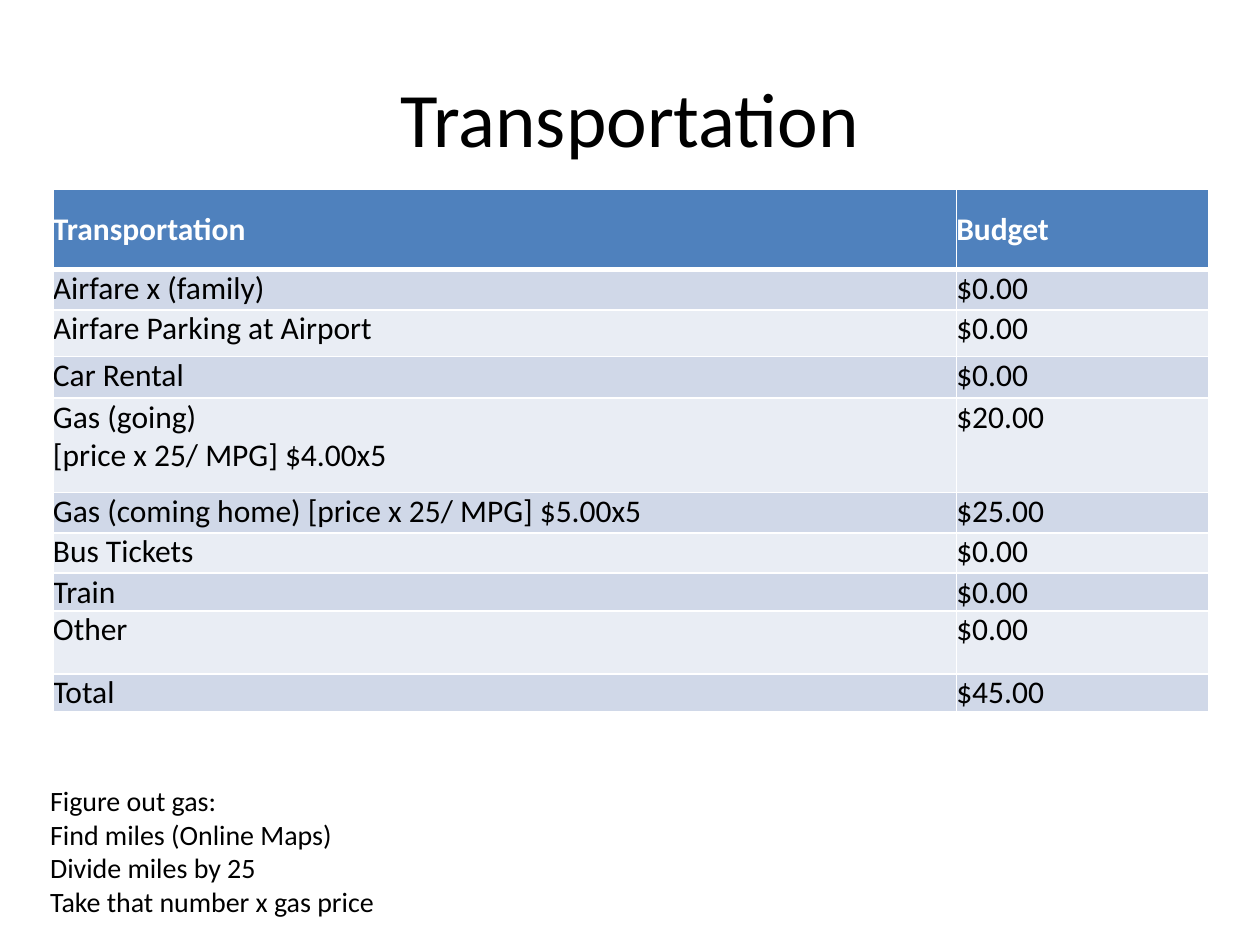
from dataclasses import dataclass

from lxml import etree
from pptx import Presentation
from pptx import util as u
from pptx.dml.color import RGBColor
from pptx.enum import text
from pptx.oxml import ns

Inches, Pt = u.Inches, u.Pt


@dataclass(frozen=True)
class Theme:
    font: str = "Calibri"
    ink: str = "000000"
    white: str = "FFFFFF"
    header: str = "4F81BD"
    bands: tuple = ("D0D8E8", "E9EDF4")
    title_size: int = 44
    table_size: int = 18
    note_size: int = 16


THEME = Theme()

COLUMN_WIDTHS = (7.17, 2)
BUDGET = [  # label, amount, row height in inches
    ("Transportation", "Budget", 0.64),
    ("Airfare x (family)", "$0.00", 0.32),
    ("Airfare Parking at Airport", "$0.00", 0.37),
    ("Car Rental", "$0.00", 0.33),
    ("Gas (going)\n[price x 25/ MPG] $4.00x5", "$20.00", 0.75),
    ("Gas (coming home) [price x 25/ MPG] $5.00x5", "$25.00", 0.32),
    ("Bus Tickets", "$0.00", 0.32),
    ("Train", "$0.00", 0.22),
    ("Other", "$0.00", 0.5),
    ("Total", "$45.00", 0.22),
]
GAS_STEPS = """Figure out gas:
Find miles (Online Maps)
Divide miles by 25
Take that number x gas price"""


def write(frame, words, size, color=THEME.ink, bold=False, align=None):
    frame.text = words
    for para in frame.paragraphs:
        para.alignment = align
        para.font.name = THEME.font
        para.font.size = Pt(size)
        para.font.bold = bold
        para.font.color.rgb = RGBColor.from_string(color)


def add_title(page, left, top, width, height):
    box = page.shapes.add_textbox(*map(Inches, (left, top, width, height)))
    box.text_frame.word_wrap = True
    box.text_frame.vertical_anchor = text.MSO_ANCHOR.MIDDLE
    write(box.text_frame, "Transportation", THEME.title_size,
          align=text.PP_ALIGN.CENTER)


def set_borders(cell, bottom):
    """Draw white 1 pt borders, with the bottom one as thick as given."""
    properties = cell._tc.get_or_add_tcPr()
    for index, (side, points) in enumerate(
            (("lnL", 1), ("lnR", 1), ("lnT", 1), ("lnB", bottom))):
        line = etree.Element(ns.qn(f"a:{side}"), w=str(Pt(points)))
        fill = etree.SubElement(line, ns.qn("a:solidFill"))
        etree.SubElement(fill, ns.qn("a:srgbClr"), val=THEME.white)
        properties.insert(index, line)


def style_cell(cell, words, is_header, fill):
    cell.margin_left = cell.margin_right = 0
    cell.margin_top = cell.margin_bottom = 0
    cell.fill.solid()
    cell.fill.fore_color.rgb = RGBColor.from_string(fill)
    set_borders(cell, bottom=3 if is_header else 1)
    if is_header:
        cell.vertical_anchor = text.MSO_ANCHOR.MIDDLE
    write(cell.text_frame, words, THEME.table_size,
          THEME.white if is_header else THEME.ink, is_header)


def add_budget_table(page, left, top):
    width = sum(COLUMN_WIDTHS)
    height = sum(row[-1] for row in BUDGET)
    table = page.shapes.add_table(
        len(BUDGET), len(COLUMN_WIDTHS),
        *map(Inches, (left, top, width, height))).table
    for column, column_width in zip(table.columns, COLUMN_WIDTHS):
        column.width = Inches(column_width)
    for index, (*words, row_height) in enumerate(BUDGET):
        row = table.rows[index]
        row.height = Inches(row_height)
        is_header = index == 0
        fill = THEME.header if is_header else THEME.bands[(index - 1) % 2]
        for cell, cell_words in zip(row.cells, words):
            style_cell(cell, cell_words, is_header, fill)


def add_gas_note(page, left, top, width, height):
    box = page.shapes.add_textbox(*map(Inches, (left, top, width, height)))
    box.text_frame.word_wrap = False
    box.text_frame.auto_size = text.MSO_AUTO_SIZE.SHAPE_TO_FIT_TEXT
    write(box.text_frame, GAS_STEPS, THEME.note_size)


def main():
    deck = Presentation()
    deck.slide_width, deck.slide_height = Inches(10), Inches(7.5)
    page = deck.slides.add_slide(deck.slide_layouts[6])
    add_title(page, 0.5, 0.3, 9, 1.25)
    add_budget_table(page, 0.42, 1.5)
    add_gas_note(page, 0.3, 6.17, 2.8, 1.18)
    deck.save("out.pptx")


if __name__ == "__main__":
    main()
